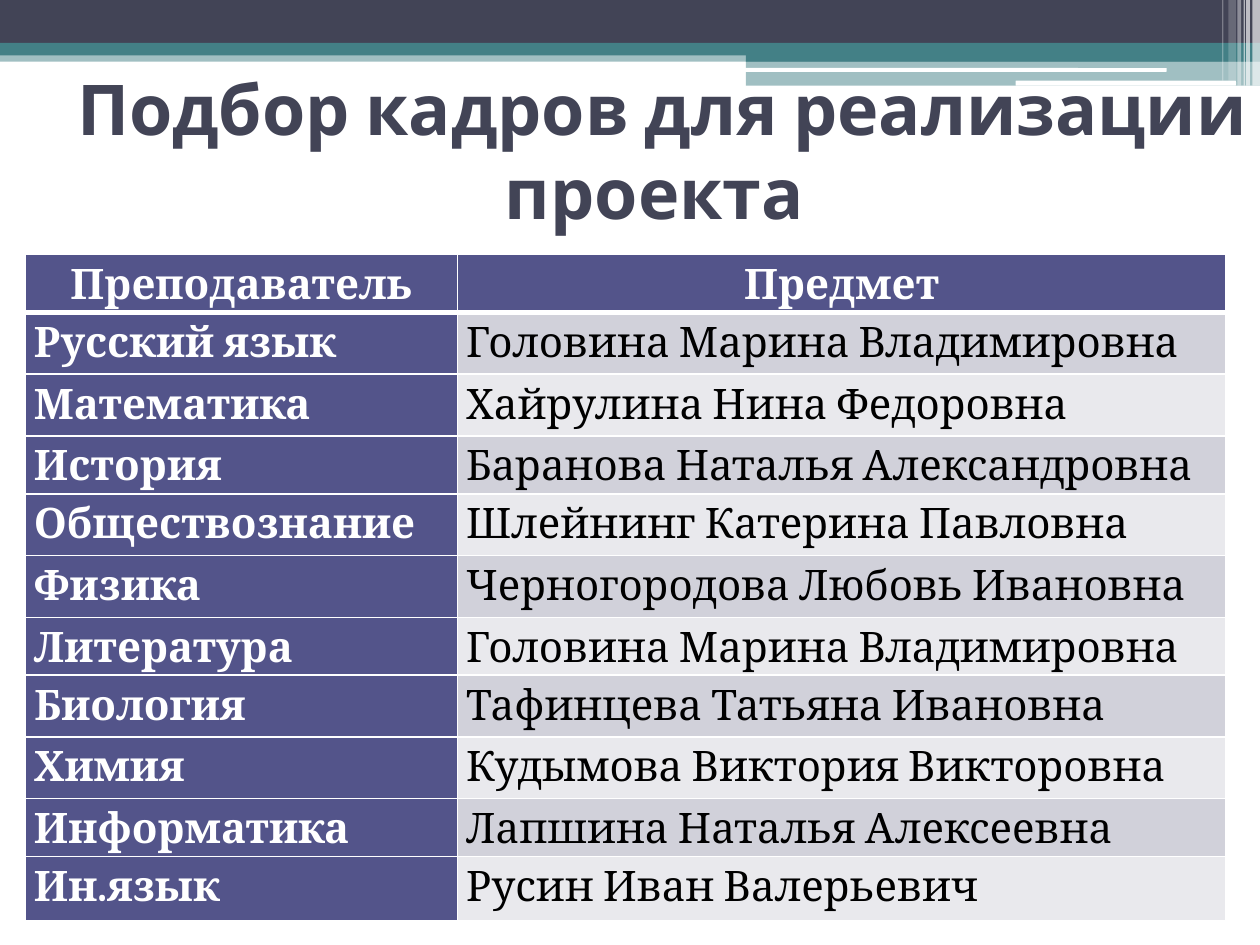
"""Build the slide listing the teachers chosen for the project."""
from lxml.etree import SubElement
from pptx import Presentation
from pptx.dml.color import RGBColor
from pptx.enum.shapes import MSO_SHAPE
from pptx.enum.text import MSO_ANCHOR, MSO_AUTO_SIZE, PP_ALIGN
from pptx.oxml.ns import qn
from pptx.util import Inches, Pt


def color(value):
    return RGBColor.from_string(value)


def format_text(paragraph, text, name, size, bold, shade):
    span = paragraph.add_run()
    span.text = text
    for key, value in {"name": name, "size": Pt(size), "bold": bold}.items():
        setattr(span.font, key, value)
    span.font.color.rgb = color(shade)


WHITE, NAVY, TEAL, VIOLET = "FFFFFF", "424456", "438086", "53548A"
BAR, ROUNDED = MSO_SHAPE.RECTANGLE, MSO_SHAPE.ROUNDED_RECTANGLE

deck = Presentation()
deck.slide_width, deck.slide_height = Inches(10), Inches(7.5)
page = deck.slides.add_slide(deck.slide_layouts[5])

bands = [
    (BAR, 0, 0.4, 10, 0.09, TEAL, 50),
    (BAR, 0, 0, 10, 0.34, NAVY, 100),
    (BAR, 0, 0.34, 10, 0.1, TEAL, 100),
    (BAR, 5.92, 0.39, 4.08, 0.1, TEAL, 100),
    (BAR, 5.92, 0.48, 4.08, 0.2, TEAL, 50),
    (ROUNDED, 5.91, 0.54, 3.35, 0.03, WHITE, 100),
    (ROUNDED, 8.06, 0.64, 1.75, 0.04, WHITE, 100),
]
stripes = [
    (9.94, 0.06, 0.68, 65),
    (9.89, 0.03, 0.68, 65),
    (9.87, 0.01, 0.68, 60),
    (9.82, 0.03, 0.68, 40),
    (9.75, 0.06, 0.64, 20),
    (9.7, 0.01, 0.64, 30),
]
bands += [(BAR, left, 0, width, height, WHITE, opacity)
          for left, width, height, opacity in stripes]
for kind, left, top, width, height, shade, opacity in bands:
    band = page.shapes.add_shape(
        kind, Inches(left), Inches(top), Inches(width), Inches(height))
    band.shadow.inherit = False
    band.line.fill.background()
    band.fill.solid()
    band.fill.fore_color.rgb = color(shade)
    if opacity < 100:
        fill = band._element.spPr.find(qn("a:solidFill"))
        SubElement(fill[0], qn("a:alpha"), val=str(opacity * 1000))

title = page.shapes.title
page.shapes._spTree.append(title._element)
title_place = {"left": 0.51, "top": 0.6, "width": 9.49, "height": 1.17}
for key, value in title_place.items():
    setattr(title, key, Inches(value))
frame = title.text_frame
frame.auto_size = MSO_AUTO_SIZE.NONE
frame.word_wrap = True
frame.vertical_anchor = MSO_ANCHOR.MIDDLE
frame.paragraphs[0].alignment = PP_ALIGN.CENTER
format_text(frame.paragraphs[0], "Подбор кадров для реализации проекта ",
            "Cabin", 40, True, NAVY)

records = [
    ("Преподаватель", "Предмет"),
    ("Русский язык", "Головина Марина Владимировна"),
    ("Математика", "Хайрулина Нина Федоровна"),
    ("История", "Баранова Наталья Александровна"),
    ("Обществознание", "Шлейнинг Катерина Павловна"),
    ("Физика", "Черногородова Любовь Ивановна"),
    ("Литература", "Головина Марина Владимировна"),
    ("Биология", "Тафинцева Татьяна Ивановна"),
    ("Химия", "Кудымова Виктория Викторовна"),
    ("Информатика", "Лапшина Наталья Алексеевна"),
    ("Ин.язык", "Русин Иван Валерьевич"),
]
row_heights = [0.46] + [0.49, 0.49, 0.46] * 3 + [0.51]
table = page.shapes.add_table(
    len(records), 2, Inches(0.2), Inches(2.02), Inches(9.53), Inches(5.28)).table
for column, width in zip(table.columns, (3.43, 6.1)):
    column.width = Inches(width)
for row, height in zip(table.rows, row_heights):
    row.height = Inches(height)

margins = {"margin_left": 0.07, "margin_right": 0.07, "margin_top": 0, "margin_bottom": 0}
for row_index, record in enumerate(records):
    for column_index, text in enumerate(record):
        cell = table.cell(row_index, column_index)
        for key, value in margins.items():
            setattr(cell, key, Inches(value))
        heading = row_index == 0 or column_index == 0
        for side in ("lnL", "lnR", "lnT", "lnB"):
            thick = (row_index, side) in ((0, "lnB"), (1, "lnT"))
            border = SubElement(cell._tc.get_or_add_tcPr(), qn(f"a:{side}"),
                                w=str(Pt(3 if thick else 1)))
            SubElement(SubElement(border, qn("a:solidFill")), qn("a:srgbClr"), val=WHITE)
        cell.fill.solid()
        stripe = "D1D1DA" if row_index % 2 else "E9E9ED"
        cell.fill.fore_color.rgb = color(VIOLET if heading else stripe)
        paragraph = cell.text_frame.paragraphs[0]
        paragraph.line_spacing = 1.15
        paragraph.alignment = PP_ALIGN.LEFT if row_index else PP_ALIGN.CENTER
        format_text(paragraph, text, "Cambria", 24, heading,
                    WHITE if heading else "000000")

deck.save("out.pptx")
